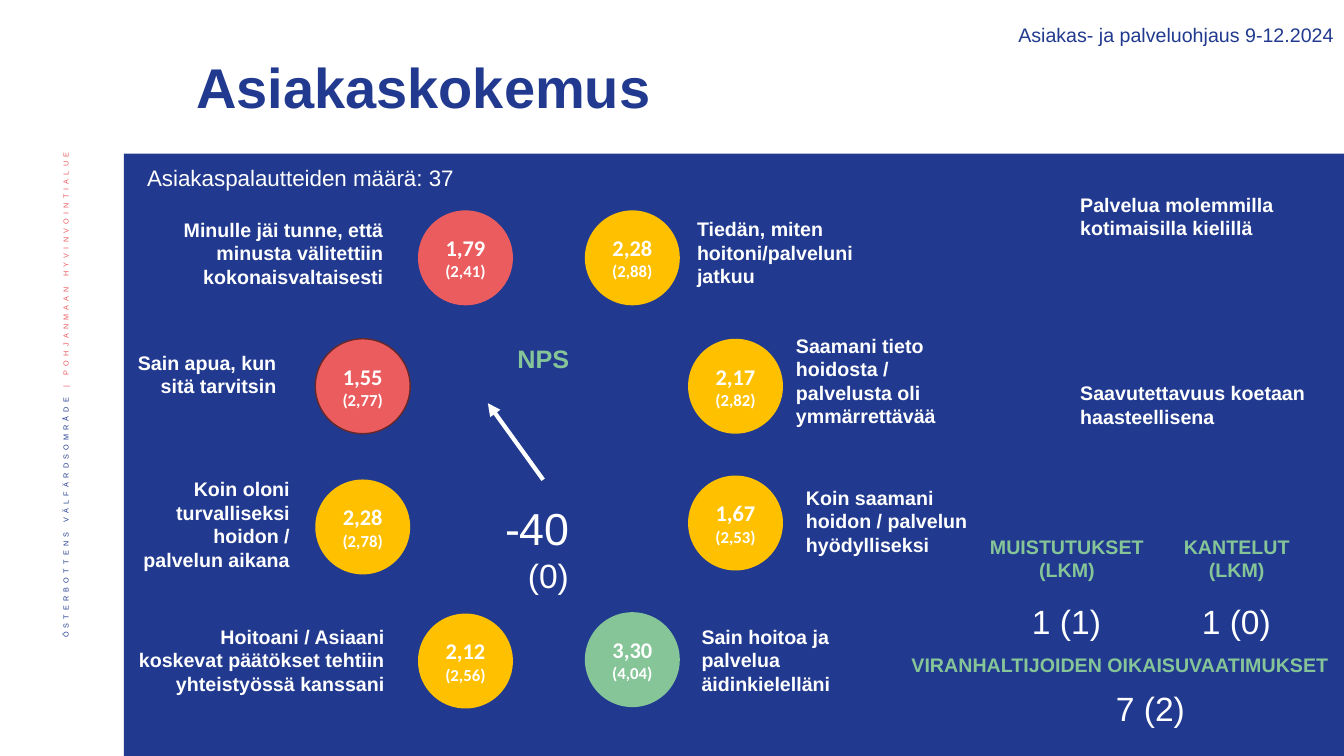
import pptx
import pptx.util
import pptx.dml.color
import pptx.enum.shapes
import pptx.enum.text
import pptx.oxml.ns
import lxml.etree

Pt = pptx.util.Pt
RGBColor = pptx.dml.color.RGBColor
MSO_SHAPE = pptx.enum.shapes.MSO_SHAPE
PP_ALIGN = pptx.enum.text.PP_ALIGN
MIDDLE = pptx.enum.text.MSO_ANCHOR.MIDDLE
qn = pptx.oxml.ns.qn
LEFT, CENTER, RIGHT = PP_ALIGN.LEFT, PP_ALIGN.CENTER, PP_ALIGN.RIGHT

BLUE = RGBColor(0x21, 0x3A, 0x8F)
RED = RGBColor(0xEB, 0x5C, 0x5F)
DARK_RED = RGBColor(0x67, 0x28, 0x2A)
YELLOW = RGBColor(0xFF, 0xC0, 0x00)
GREEN = RGBColor(0x85, 0xC5, 0x98)
WHITE = RGBColor(0xFF, 0xFF, 0xFF)

prs = pptx.Presentation()
prs.slide_width, prs.slide_height = Pt(960), Pt(540)
s = prs.slides.add_slide(prs.slide_layouts[6])


def add_text(box, paragraphs, align=LEFT, font="Arial"):
    """Add a text box; each paragraph is a list of (text, size, colour, bold) runs."""
    sp = s.shapes.add_textbox(*[Pt(v) for v in box])
    write(sp.text_frame, paragraphs, align, font)
    return sp


def write(tf, paragraphs, align, font):
    tf.word_wrap = True
    for i, runs in enumerate(paragraphs):
        p = tf.add_paragraph() if i else tf.paragraphs[0]
        p.alignment = align
        for text, size, color, bold in runs:
            r = p.add_run()
            r.text = text
            r.font.name, r.font.size, r.font.bold = font, Pt(size), bold
            r.font.color.rgb = color


# Blue panel and white header
for box, color in [((88.5, 0, 871.5, 540), BLUE), ((83, 0, 877, 109.8), WHITE)]:
    sp = s.shapes.add_shape(MSO_SHAPE.RECTANGLE, *[Pt(v) for v in box])
    sp.shadow.inherit = False
    sp.fill.solid()
    sp.fill.fore_color.rgb = color
    sp.line.fill.background()

# Vertical organisation name
sp = add_text((30, 102, 37.5, 412.5),
              [[("ÖSTERBOTTENS VÄLFÄRDSOMRÅDE ", 9, BLUE, False),
                ("| POHJANMAAN HYVINVOINTIALUE", 9, RED, False)]], RIGHT)
tf = sp.text_frame
tf.vertical_anchor = MIDDLE
tf._txBody.find(qn("a:bodyPr")).set("vert", "vert270")
tf.paragraphs[0].line_spacing = 0.9
for r in tf.paragraphs[0].runs:
    r.font._element.set("baseline", "30000")
    r.font._element.set("spc", "300")

# Title and headings
sp = add_text((133, 34, 734.5, 61), [[("Asiakaskokemus", 40, BLUE, True)]])
sp.text_frame.vertical_anchor = MIDDLE
sp.text_frame.paragraphs[0].line_spacing = 0.9
add_text((376, 13, 584, 24.5), [[("Asiakas- ja palveluohjaus 9-12.2024", 14, BLUE, False)]], RIGHT)
add_text((98, 113.8, 313, 26.6), [[("Asiakaspalautteiden määrä: 37", 16, WHITE, False)]])

# Net promoter score with its trend arrow
add_text((360.8, 242, 54.7, 29), [[("NPS", 18, GREEN, True)]], CENTER)
add_text((316, 354.3, 144.7, 75),
         [[("-40 ", 32, WHITE, False)], [(" (0)", 24, WHITE, False)]], CENTER)
arrow = s.shapes.add_connector(pptx.enum.shapes.MSO_CONNECTOR.STRAIGHT,
                               Pt(388), Pt(342.7), Pt(348.5), Pt(288))
arrow.line.color.rgb = WHITE
arrow.line.width = Pt(3)
lxml.etree.SubElement(arrow.line._get_or_add_ln(), qn("a:tailEnd"), type="triangle")
lxml.etree.SubElement(arrow._element.spPr, qn("a:effectLst"))

# Ring of ratings: label, label box, label alignment, score, previous, colour, circle corner
DIAMETER = 67.8
ratings = [
    ("Minulle jäi tunne, että minusta välitettiin kokonaisvaltaisesti",
     (116, 152, 165, 58), RIGHT, "1,79", "2,41", RED, (298.6, 150.3)),
    ("Sain apua, kun sitä tarvitsin",
     (88.6, 246.8, 116, 41), RIGHT, "1,55", "2,77", RED, (225.2, 242)),
    ("Koin oloni turvalliseksi hoidon / palvelun aikana",
     (88.6, 337.2, 125.5, 75), RIGHT, "2,28", "2,78", YELLOW, (225.2, 342.5)),
    ("Hoitoani / Asiaani koskevat päätökset tehtiin yhteistyössä kanssani",
     (88.6, 442.8, 193.2, 58), RIGHT, "2,12", "2,56", YELLOW, (298.6, 438.3)),
    ("Tiedän, miten hoitoni/palveluni jatkuu",
     (490.8, 151.4, 138.2, 58), LEFT, "2,28", "2,88", YELLOW, (417.8, 150.3)),
    ("Saamani tieto hoidosta / palvelusta oli ymmärrettävää",
     (561.5, 234.8, 138.2, 75), LEFT, "2,17", "2,82", YELLOW, (491.5, 242)),
    ("Koin saamani hoidon / palvelun hyödylliseksi",
     (568.6, 343.3, 144.7, 58), LEFT, "1,67", "2,53", YELLOW, (491.5, 339.7)),
    ("Sain hoitoa ja palvelua äidinkielelläni",
     (494, 442.8, 133.2, 58), LEFT, "3,30", "4,04", GREEN, (417.8, 437.3)),
]
for label, box, align, score, previous, color, (x, y) in ratings:
    add_text(box, [[(label, 14, WHITE, True)]], align)
    sp = s.shapes.add_shape(MSO_SHAPE.OVAL, Pt(x), Pt(y), Pt(DIAMETER), Pt(DIAMETER))
    sp.shadow.inherit = False
    sp.fill.solid()
    sp.fill.fore_color.rgb = color
    if score == "1,55":
        sp.line.color.rgb = DARK_RED
        sp.line.width = Pt(1)
    else:
        sp.line.fill.background()
    sp.text_frame.vertical_anchor = MIDDLE
    write(sp.text_frame, [[(score + " ", 16, WHITE, True),
                           (f"({previous})", 12, WHITE, True)]], CENTER, "Calibri")

# Remarks on the right
sp = add_text((764.5, 134, 183.6, 193.7),
              [[("Palvelua molemmilla kotimaisilla kielillä", 14, WHITE, True)],
               [("Saavutettavuus koetaan haasteellisena", 14, WHITE, True)]])
sp.text_frame.paragraphs[1].space_before = Pt(101)

# Complaint counts
for x, heading, count in [(696.2, "MUISTUTUKSET (LKM)", "1 (1)"), (817.5, "KANTELUT (LKM)", "1 (0)")]:
    add_text((x, 378.2, 131.8, 41), [[(heading, 14, GREEN, True)]], CENTER)
    add_text((x + 10.5, 425.8, 110.2, 36), [[(count, 24, WHITE, False)]], CENTER)
add_text((644, 462.8, 316, 24.5), [[("VIRANHALTIJOIDEN OIKAISUVAATIMUKSET", 14, GREEN, True)]])
add_text((790, 487.6, 67.7, 36), [[("7 (2)", 24, WHITE, False)]])

prs.save("out.pptx")
